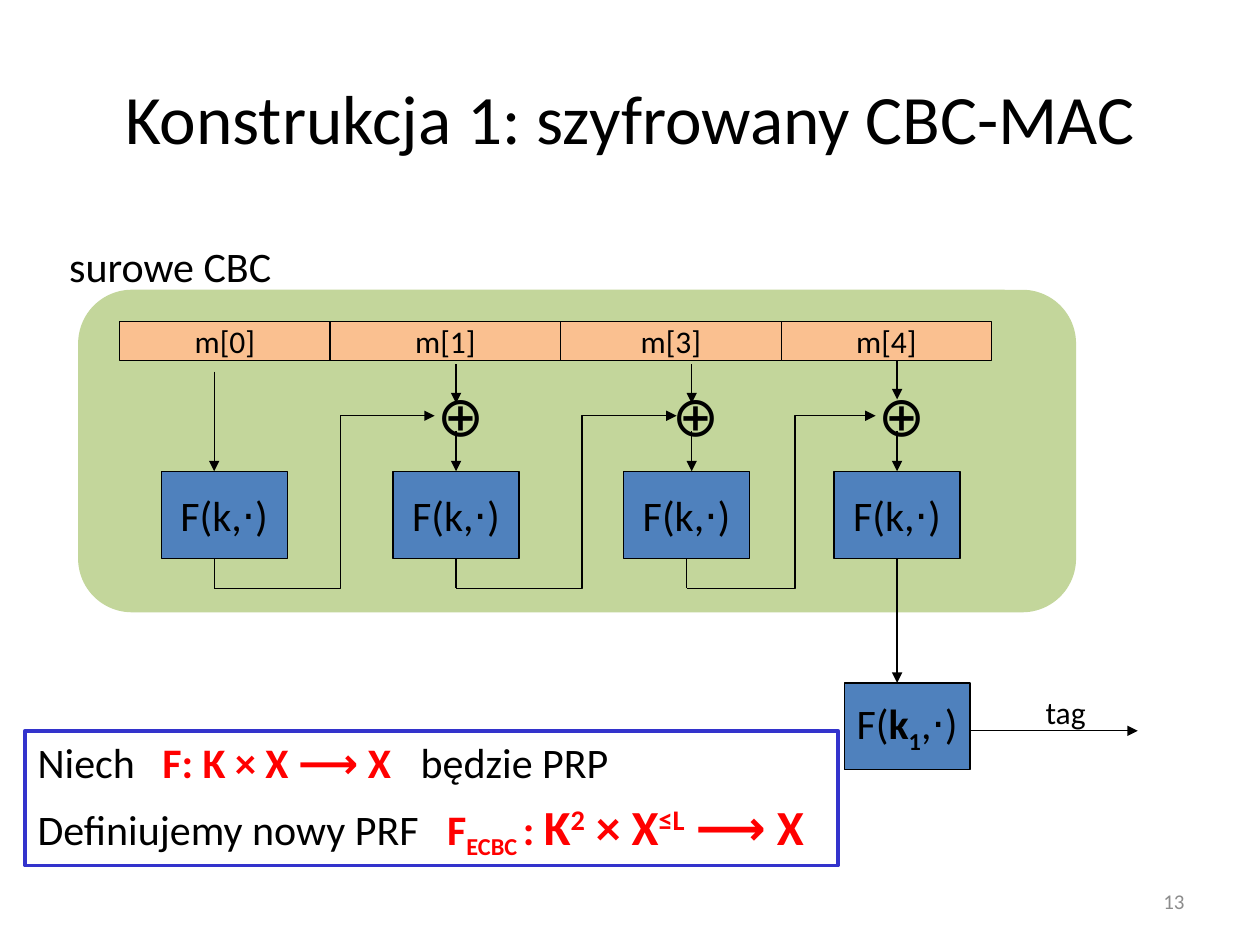
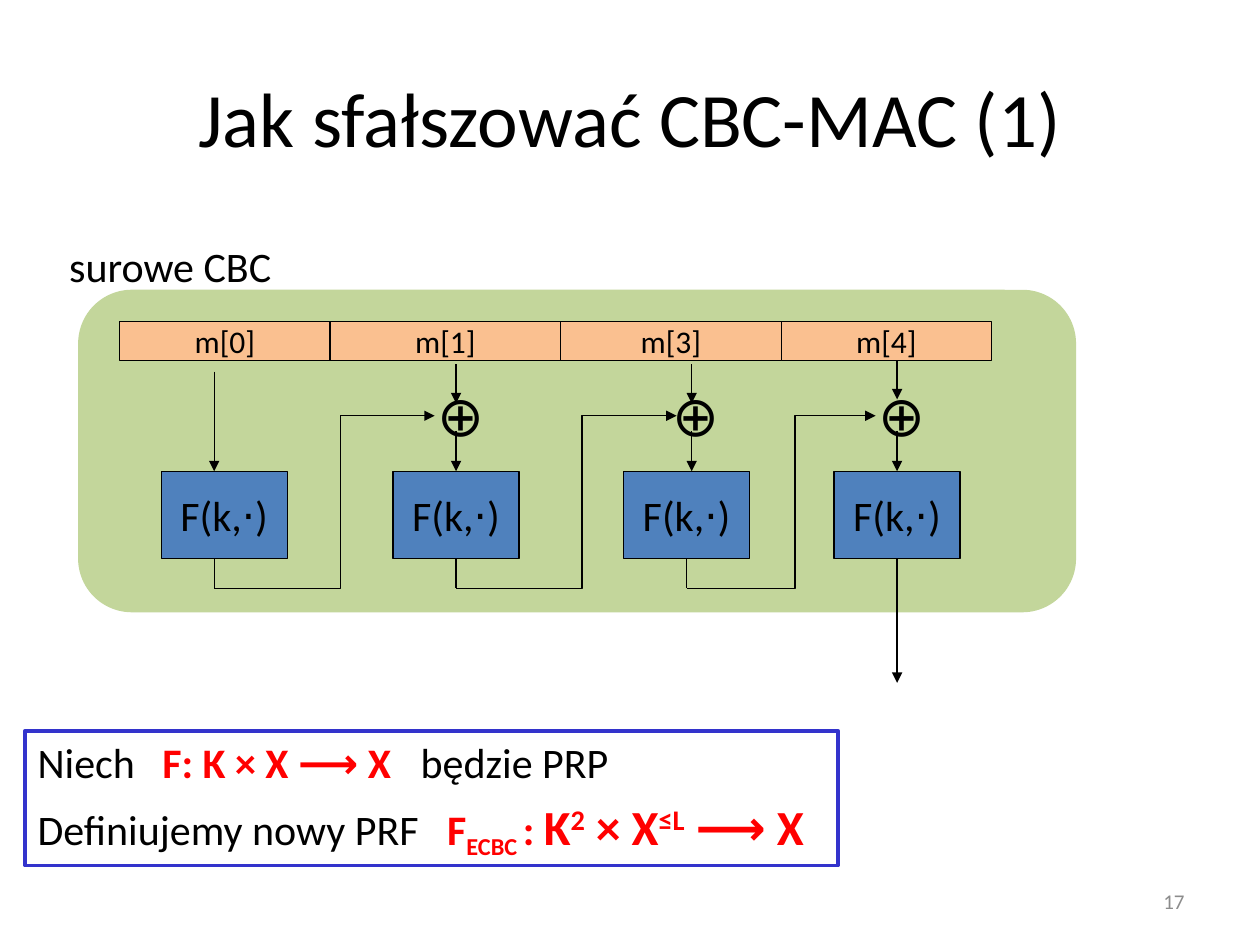
from dataclasses import dataclass
from typing import Any, NamedTuple

from lxml.etree import SubElement
from pptx import Presentation
from pptx.dml.color import RGBColor as Rgb
from pptx.enum.shapes import MSO_CONNECTOR as Connector, MSO_SHAPE as Preset
from pptx.enum.text import MSO_ANCHOR as Anchor, MSO_AUTO_SIZE as AutoSize, PP_ALIGN as Align
from pptx.oxml.ns import qn
from pptx.util import Emu, Pt

EMU_PER_PX = 9144
TOP, BOTTOM = 0, 2


@dataclass(frozen=True)
class Theme:
    font: str = "Calibri"
    ink: str = "000000"
    accent: str = "FF0000"
    muted: str = "8C8C8C"
    panel: str = "C3D69B"
    cipher: str = "4F81BD"
    message: str = "FAC090"
    frame: str = "3333CC"
    body: float = 24
    formula: float = 28
    small: float = 18
    xor: float = 32
    number: float = 12
    hairline: float = 0.75
    border: float = 2.25


THEME = Theme()


class Area(NamedTuple):
    left: int
    top: int
    width: int
    height: int

    @property
    def center_x(self) -> float:
        return self.left + self.width / 2


class Part(NamedTuple):
    text: str
    size: float = THEME.body
    color: str = THEME.ink
    bold: bool = False
    baseline: int = 0


class Block(NamedTuple):
    label: str
    cell_width: int
    cipher_left: int
    input_x: int
    input_top: int
    output_x: int


class Feedback(NamedTuple):
    start_x: int
    riser_x: int
    end_x: int


class Page(NamedTuple):
    title: str
    title_size: float
    number: str
    encrypted: bool


BLOCKS = [
    Block("m[0]", 167, 128, 170, 295, 170),
    Block("m[1]", 183, 312, 362, 289, 362),
    Block("m[3]", 175, 495, 549, 289, 545),
    Block("m[4]", 167, 662, 712, 286, 712),
]
FEEDBACKS = [Feedback(170, 270, 345), Feedback(362, 462, 537), Feedback(545, 631, 695)]
PAGES = [
    Page("Konstrukcja 1: szyfrowany CBC-MAC", 39.6, "13", True),
    Page("Jak sfałszować CBC-MAC (1)", 44, "17", False),
]

MESSAGE_LEFT, MESSAGE_TOP, MESSAGE_HEIGHT = 95, 255, 31
CIPHER_TOP, CIPHER_WIDTH, CIPHER_HEIGHT = 374, 100, 69
CIPHER_BOTTOM = CIPHER_TOP + CIPHER_HEIGHT
XOR_Y, XOR_BOTTOM, XOR_ARROW = 330, 342, 31
RETURN_Y, TAG_TOP = 467, 542


def red(text: str, size: float = THEME.body, baseline: int = 0) -> Part:
    return Part(text, size, THEME.accent, True, baseline)


PRP_LINE = [Part("Niech\t"), red("F: K × X ⟶ X\t"), Part("będzie PRP")]
PRF_LINE = [
    Part("Definiujemy nowy PRF\t"),
    red("F"),
    red("ECBC ", baseline=-25),
    red(": "),
    red("K", THEME.formula),
    red("2", THEME.formula, 30),
    red(" × X", THEME.formula),
    red("≤L", THEME.formula, 30),
    red(" ⟶ X", THEME.formula),
]
DEFINITION = [(PRP_LINE, [99, 304]), (PRF_LINE, [325])]


def px(length: float) -> Emu:
    return Emu(round(length * EMU_PER_PX))


def emu(lengths: Any) -> list[Emu]:
    return [px(length) for length in lengths]


def apply_format(target: Any, values: dict[str, Any]) -> None:
    for attribute, value in values.items():
        setattr(target, attribute, value)


def write(paragraph: Any, parts: list[Part], align: Align = Align.LEFT) -> None:
    paragraph.alignment = align
    for part in parts:
        run = paragraph.add_run()
        run.text = part.text
        apply_format(run.font, {"name": THEME.font, "size": Pt(part.size), "bold": part.bold})
        run.font.color.rgb = Rgb.from_string(part.color)
        if part.baseline:
            run.font._element.set("baseline", str(part.baseline * 1000))


def stroke(shape: Any, color: str = THEME.ink, width: float = THEME.hairline) -> None:
    shape.line.color.rgb = Rgb.from_string(color)
    shape.line.width = Pt(width)


def add_arrowhead(shape: Any) -> None:
    SubElement(shape.line._get_or_add_ln(), qn("a:tailEnd"), type="triangle")


def add_box(slide: Any, area: Area, fill: str | None, parts: list[Part],
            preset: Preset = Preset.RECTANGLE) -> Any:
    box = slide.shapes.add_shape(preset, *emu(area))
    box.shadow.inherit = False
    if fill:
        box.fill.solid()
        box.fill.fore_color.rgb = Rgb.from_string(fill)
    else:
        box.fill.background()
    stroke(box)
    apply_format(box.text_frame, {"word_wrap": False, "vertical_anchor": Anchor.MIDDLE})
    write(box.text_frame.paragraphs[0], parts, Align.CENTER)
    return box


def add_label(slide: Any, area: Area, part: Part) -> None:
    label = slide.shapes.add_textbox(*emu(area))
    apply_format(label.text_frame, {"word_wrap": False, "auto_size": AutoSize.SHAPE_TO_FIT_TEXT})
    write(label.text_frame.paragraphs[0], [part])


def add_line(slide: Any, start: tuple[int, int], end: tuple[int, int], arrow: bool = True) -> Any:
    line = slide.shapes.add_connector(Connector.STRAIGHT, *emu((*start, *end)))
    stroke(line)
    if arrow:
        add_arrowhead(line)
    SubElement(line._element.spPr, qn("a:effectLst"))
    return line


def add_feedback(slide: Any, feedback: Feedback) -> None:
    builder = slide.shapes.build_freeform(px(feedback.start_x), px(RETURN_Y))
    corners = [(feedback.riser_x, RETURN_Y), (feedback.riser_x, XOR_Y), (feedback.end_x, XOR_Y)]
    builder.add_line_segments([tuple(emu(corner)) for corner in corners], close=False)
    route = builder.convert_to_shape()
    route.shadow.inherit = False
    route.fill.background()
    stroke(route)
    add_arrowhead(route)


def add_block(slide: Any, block: Block, cell_left: int, first: bool, last: bool) -> None:
    area = Area(block.cipher_left, CIPHER_TOP, CIPHER_WIDTH, CIPHER_HEIGHT)
    cipher = add_box(slide, area, THEME.cipher, [Part("F(k,⋅)")])
    cell = Area(cell_left, MESSAGE_TOP, block.cell_width, MESSAGE_HEIGHT)
    add_box(slide, cell, THEME.message, [Part(block.label, THEME.small)])
    input_start = block.input_top
    if not first:
        add_label(slide, Area(block.input_x - 25, 297, 55, 64), Part("⊕", THEME.xor))
        add_line(slide, (block.input_x, block.input_top),
                 (block.input_x, block.input_top + XOR_ARROW))
        input_start = XOR_BOTTOM
    cipher_input = add_line(slide, (block.input_x, input_start), (block.input_x, CIPHER_TOP))
    output_end = TAG_TOP if last else RETURN_Y
    cipher_output = add_line(slide, (block.output_x, CIPHER_BOTTOM),
                             (block.output_x, output_end), arrow=last)
    if block.input_x == area.center_x:
        cipher_input.end_connect(cipher, TOP)
    if block.output_x == area.center_x:
        cipher_output.begin_connect(cipher, BOTTOM)


def add_raw_cbc(slide: Any) -> None:
    panel = add_box(slide, Area(62, 230, 792, 256), THEME.panel, [], Preset.ROUNDED_RECTANGLE)
    panel.line.fill.background()
    add_label(slide, Area(45, 186, 182, 51), Part("surowe CBC"))
    cell_left = MESSAGE_LEFT
    for block in BLOCKS:
        add_block(slide, block, cell_left, block is BLOCKS[0], block is BLOCKS[-1])
        cell_left += block.cell_width
    for feedback in FEEDBACKS:
        add_feedback(slide, feedback)


def add_tag_step(slide: Any) -> None:
    key = [Part("F("), Part("k", bold=True), Part("1", bold=True, baseline=-25), Part(",⋅)")]
    add_box(slide, Area(670, TAG_TOP, CIPHER_WIDTH, CIPHER_HEIGHT), THEME.cipher, key)
    add_line(slide, (770, 580), (903, 580))
    add_label(slide, Area(820, 545, 53, 40), Part("tag", THEME.small))


def add_definition(slide: Any) -> None:
    definition = add_box(slide, Area(20, 580, 645, 107), None, [])
    stroke(definition, THEME.frame, THEME.border)
    frame = definition.text_frame
    apply_format(frame, {"word_wrap": True, "vertical_anchor": Anchor.TOP})
    for index, (parts, stops) in enumerate(DEFINITION):
        paragraph = frame.add_paragraph() if index else frame.paragraphs[0]
        write(paragraph, parts)
        paragraph.space_before = Pt(5)
        tabs = SubElement(paragraph._p.get_or_add_pPr(), qn("a:tabLst"))
        for stop in stops:
            SubElement(tabs, qn("a:tab"), pos=str(px(stop)), algn="l")


def add_heading(slide: Any, page: Page) -> None:
    title = slide.shapes.title
    apply_format(title, dict(zip(("left", "top", "width", "height"), emu((50, 30, 900, 125)))))
    title.text_frame.vertical_anchor = Anchor.MIDDLE
    write(title.text_frame.paragraphs[0], [Part(page.title, page.title_size)], Align.CENTER)
    number = slide.shapes.add_textbox(*emu((717, 695, 233, 40)))
    apply_format(number.text_frame, {"word_wrap": True, "vertical_anchor": Anchor.MIDDLE})
    write(number.text_frame.paragraphs[0], [Part(page.number, THEME.number, THEME.muted)],
          Align.RIGHT)


def main() -> None:
    deck = Presentation()
    apply_format(deck, {"slide_width": px(1000), "slide_height": px(750)})
    title_only = deck.slide_layouts.get_by_name("Title Only")
    for page in PAGES:
        slide = deck.slides.add_slide(title_only)
        add_heading(slide, page)
        add_raw_cbc(slide)
        if page.encrypted:
            add_tag_step(slide)
        add_definition(slide)
    deck.save("out.pptx")


if __name__ == "__main__":
    main()
